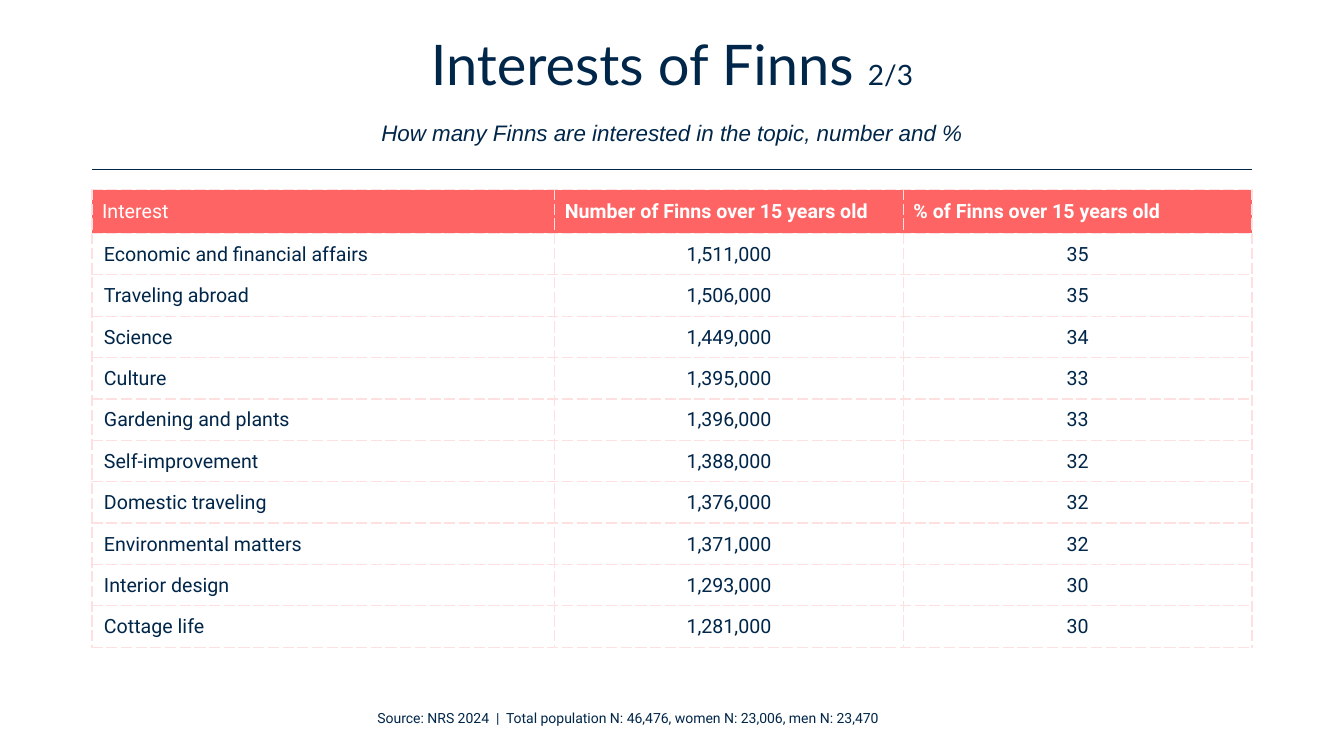
from dataclasses import dataclass

from pptx import Presentation
from pptx.dml.color import RGBColor as Rgb
from pptx.enum.shapes import MSO_CONNECTOR as Connector
from pptx.enum.text import MSO_ANCHOR as Anchor, MSO_AUTO_SIZE as AutoSize, PP_ALIGN as Align
from pptx.oxml import parse_xml
from pptx.oxml.ns import nsdecls, qn
from pptx.util import Cm, Pt


@dataclass(frozen=True)
class Theme:
    navy: str = "002649"
    coral: str = "FF6464"
    blush: str = "FFE0E0"
    white: str = "FFFFFF"
    heading_font: str = "Lato"
    subtitle_font: str = "Arial"
    body_font: str = "Roboto"
    heading_size: int = 40
    counter_size: int = 20
    subtitle_size: int = 16
    table_size: int = 14
    source_size: int = 10


THEME = Theme()
HEADERS = ("Interest", "Number of Finns over 15 years old", "% of Finns over 15 years old")
INTERESTS = (
    ("Economic and financial affairs", 1511000, 35),
    ("Traveling abroad", 1506000, 35),
    ("Science", 1449000, 34),
    ("Culture", 1395000, 33),
    ("Gardening and plants", 1396000, 33),
    ("Self-improvement", 1388000, 32),
    ("Domestic traveling", 1376000, 32),
    ("Environmental matters", 1371000, 32),
    ("Interior design", 1293000, 30),
    ("Cottage life", 1281000, 30),
)
SOURCE = "Source: NRS 2024  |  Total population N: 46,476, women N: 23,006, men N: 23,470"


def apply(target, values):
    for name, value in values.items():
        setattr(target, name, value)


def add_span(para, text, name, size, color=THEME.navy, **style):
    span = para.add_run()
    span.text = text
    apply(span.font, {"name": name, "size": Pt(size), **style})
    span.font.color.rgb = Rgb.from_string(color)


def add_text_box(page, left, top, width, height, **frame_style):
    box = page.shapes.add_textbox(Cm(left), Cm(top), Cm(width), Cm(height))
    apply(box.text_frame, {"word_wrap": True, **frame_style})
    para = box.text_frame.paragraphs[0]
    para.alignment = Align.CENTER
    return para


# Heading, page counter and subtitle
def add_heading(page, left, top, width, height):
    para = add_text_box(page, left, top, width, height, vertical_anchor=Anchor.MIDDLE)
    apply(para, {"line_spacing": Pt(35), "space_after": Pt(18)})
    add_span(para, "Interests of Finns ", THEME.heading_font, THEME.heading_size)
    add_span(para, "2/3", THEME.heading_font, THEME.counter_size)
    para.add_line_break()
    add_span(para, "How many Finns are interested in the topic, number and %",
             THEME.subtitle_font, THEME.subtitle_size, italic=True)


# Rule under the heading
def add_rule(page, left, top, width):
    rule = page.shapes.add_connector(
        Connector.STRAIGHT, Cm(left), Cm(top), Cm(left + width), Cm(top))
    rule.line.width = Pt(1)
    rule.line.color.rgb = Rgb.from_string(THEME.navy)
    rule._element.spPr.append(parse_xml(f"<a:effectLst {nsdecls('a')}/>"))


def add_borders(cell):
    properties = cell._tc.get_or_add_tcPr()
    for side in ("lnL", "lnR", "lnT", "lnB"):
        properties.append(parse_xml(
            f'<a:{side} {nsdecls("a")} w="{Pt(1)}"><a:solidFill>'
            f'<a:srgbClr val="{THEME.blush}"/></a:solidFill>'
            f'<a:prstDash val="sysDash"/></a:{side}>'))


def fill_cell(cell, text, is_header, column):
    add_borders(cell)
    cell.vertical_anchor = Anchor.MIDDLE
    para = cell.text_frame.paragraphs[0]
    if is_header:
        cell.fill.solid()
        cell.fill.fore_color.rgb = Rgb.from_string(THEME.coral)
    else:
        cell.fill.background()
        apply(cell, {"margin_left": Cm(0.03 if column else 0.3), "margin_right": Cm(0.03),
                     "margin_top": Cm(0.03), "margin_bottom": 0})
        para.alignment = Align.CENTER if column else Align.LEFT
    add_span(para, text, THEME.body_font, THEME.table_size,
             THEME.white if is_header else THEME.navy, bold=is_header and column > 0)


# Table of interests
def add_interest_table(page, left, top, width, height):
    rows = [HEADERS] + [(topic, f"{count:,}", str(share)) for topic, count, share in INTERESTS]
    frame = page.shapes.add_table(
        len(rows), len(HEADERS), Cm(left), Cm(top), Cm(width), Cm(height))
    table = frame.table
    table.horz_banding = False
    topic_width, header_height = 11.66, 1.1
    for index, column in enumerate(table.columns):
        column.width = Cm((width - topic_width) / 2 if index else topic_width)
    for index, row in enumerate(table.rows):
        row.height = Cm((height - header_height) / len(INTERESTS) if index else header_height)
        for column, text in enumerate(rows[index]):
            fill_cell(table.cell(index, column), text, index == 0, column)


# Source line
def add_source(page, left, top, width, height):
    para = add_text_box(page, left, top, width, height, auto_size=AutoSize.SHAPE_TO_FIT_TEXT)
    add_span(para, SOURCE, THEME.body_font, THEME.source_size)


def main():
    deck = Presentation()
    apply(deck, {"slide_width": Cm(33.87), "slide_height": Cm(19.05)})
    page = deck.slides.add_slide(deck.slide_layouts[6])
    left, width = 2.32, 29.23
    add_source(page, 7.62, 17.75, 16.41, 0.68)
    add_heading(page, left, 1.07, width, 2.72)
    add_rule(page, left, 4.27, width)
    add_interest_table(page, left, 4.78, width, 11.53)
    deck.save("out.pptx")


if __name__ == "__main__":
    main()
